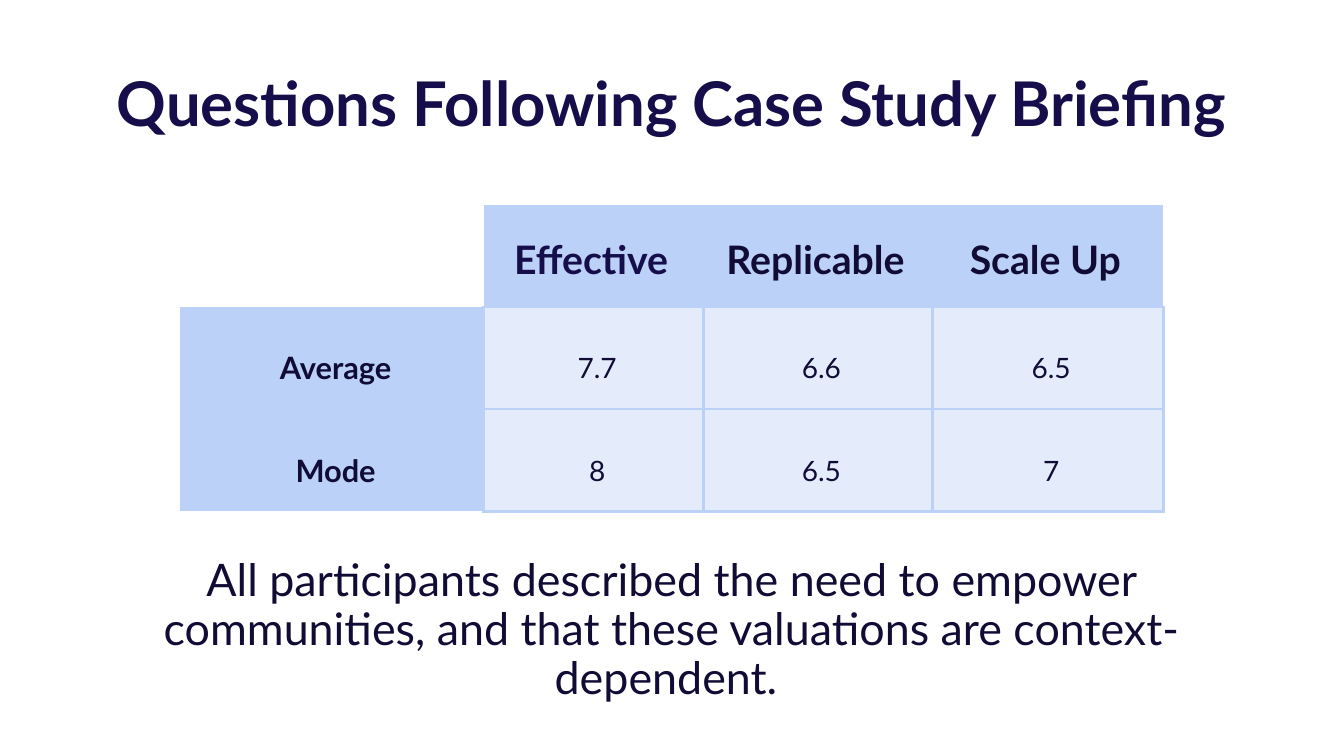
"""Build a slide with a table of ratings after a case study briefing."""
from lxml import etree
from pptx import Presentation
from pptx.dml.color import RGBColor
from pptx.enum.text import MSO_ANCHOR, PP_ALIGN
from pptx.oxml.ns import qn
from pptx.util import Pt

CENTER = PP_ALIGN.CENTER
TOP, MIDDLE = MSO_ANCHOR.TOP, MSO_ANCHOR.MIDDLE
FONT = "Lato"
COLORS = {"title": "150E4A", "ink": "100C35", "head": "BCD1F7", "body": "DEE8FB"}

TITLE = "Questions Following Case Study Briefing"
NOTE = ("All participants described the need to empower communities, "
        "and that these valuations are context-dependent. ")
ROWS = [
    ["", "Effective", "Replicable", "Scale Up"],
    ["Average", "7.7", "6.6", "6.5"],
    ["Mode", "8", "6.5", "7"],
]
WIDTHS = [216.7, 157, 163.4, 164.9]
HEIGHT = 73
LEFT, UPPER = 128.9, 146.2
HEAD_PAD = (0, 22.3, 3.6, 0)
BODY_PAD = (8.6, 15.8, 3.6, 1.4)
ALPHA = 80000


def write(frame, text, size, color, bold):
    """Put one centred line of styled text in a frame."""
    para = frame.paragraphs[0]
    para.text = text
    para.alignment = CENTER
    for run in para.runs:
        font = run.font
        font.name, font.size, font.bold = FONT, Pt(size), bold
        font.color.rgb = RGBColor.from_string(COLORS[color])
    return para


def add_text(slide, top, height, *style):
    """Add a full-width text box and return its paragraph."""
    box = slide.shapes.add_textbox(Pt(54.7), Pt(top), Pt(850.3), Pt(height))
    box.text_frame.word_wrap = True
    return write(box.text_frame, *style)


def add_edges(cell, sides):
    """Draw the named sides of a cell and clear the others."""
    props = cell._tc.get_or_add_tcPr()
    for side in "LRTB":
        line = etree.SubElement(props, qn(f"a:ln{side}"), w=str(Pt(2.25)))
        if side in sides:
            fill = etree.SubElement(line, qn("a:solidFill"))
            etree.SubElement(fill, qn("a:srgbClr"), val=COLORS["head"])
        else:
            etree.SubElement(line, qn("a:noFill"))


def paint(cell, color):
    """Fill a cell, letting body cells show through a little."""
    cell.fill.solid()
    cell.fill.fore_color.rgb = RGBColor.from_string(COLORS[color])
    if color == "body":
        tone = cell._tc.tcPr.find(".//" + qn("a:solidFill") + "/" + qn("a:srgbClr")
                                  + "[@val='" + COLORS["body"] + "']")
        etree.SubElement(tone, qn("a:alpha"), val=str(ALPHA))


def style_cell(cell, row, col):
    """Give a cell its text, edges and fill by its place in the grid."""
    if row == col == 0:
        add_edges(cell, "")
        cell.fill.background()
        return
    if row == 0:
        size, pad, anchor, sides = 28, HEAD_PAD, TOP, "B"
    elif col == 0:
        size, pad, anchor, sides = 22, BODY_PAD, MIDDLE, "R"
    else:
        size, pad, anchor, sides = 20, BODY_PAD, MIDDLE, "LRTB"
    head = row == 0 or col == 0
    ink = "title" if (row, col) == (0, 1) else "ink"
    write(cell.text_frame, ROWS[row][col], size, ink, head)
    cell.vertical_anchor = anchor
    (cell.margin_left, cell.margin_top,
     cell.margin_right, cell.margin_bottom) = map(Pt, pad)
    add_edges(cell, sides)
    paint(cell, "head" if head else "body")


def add_grid(slide):
    """Add the table of ratings."""
    count = len(ROWS)
    table = slide.shapes.add_table(count, len(WIDTHS), Pt(LEFT), Pt(UPPER),
                                   Pt(sum(WIDTHS)), Pt(HEIGHT * count)).table
    table.first_row = table.horz_banding = False
    for col, width in enumerate(WIDTHS):
        table.columns[col].width = Pt(width)
    for row in range(count):
        table.rows[row].height = Pt(HEIGHT)
        for col in range(len(WIDTHS)):
            style_cell(table.cell(row, col), row, col)


def main():
    """Build and save the slide."""
    deck = Presentation()
    deck.slide_width, deck.slide_height = Pt(960), Pt(540)
    slide = deck.slides.add_slide(deck.slide_layouts[6])
    add_text(slide, 43.2, 60.5, TITLE, 44, "title", True)
    note = add_text(slide, 393.8, 77.8, NOTE, 32, "ink", False)
    note.line_spacing = Pt(35)
    add_grid(slide)
    deck.save("out.pptx")


if __name__ == "__main__":
    main()
